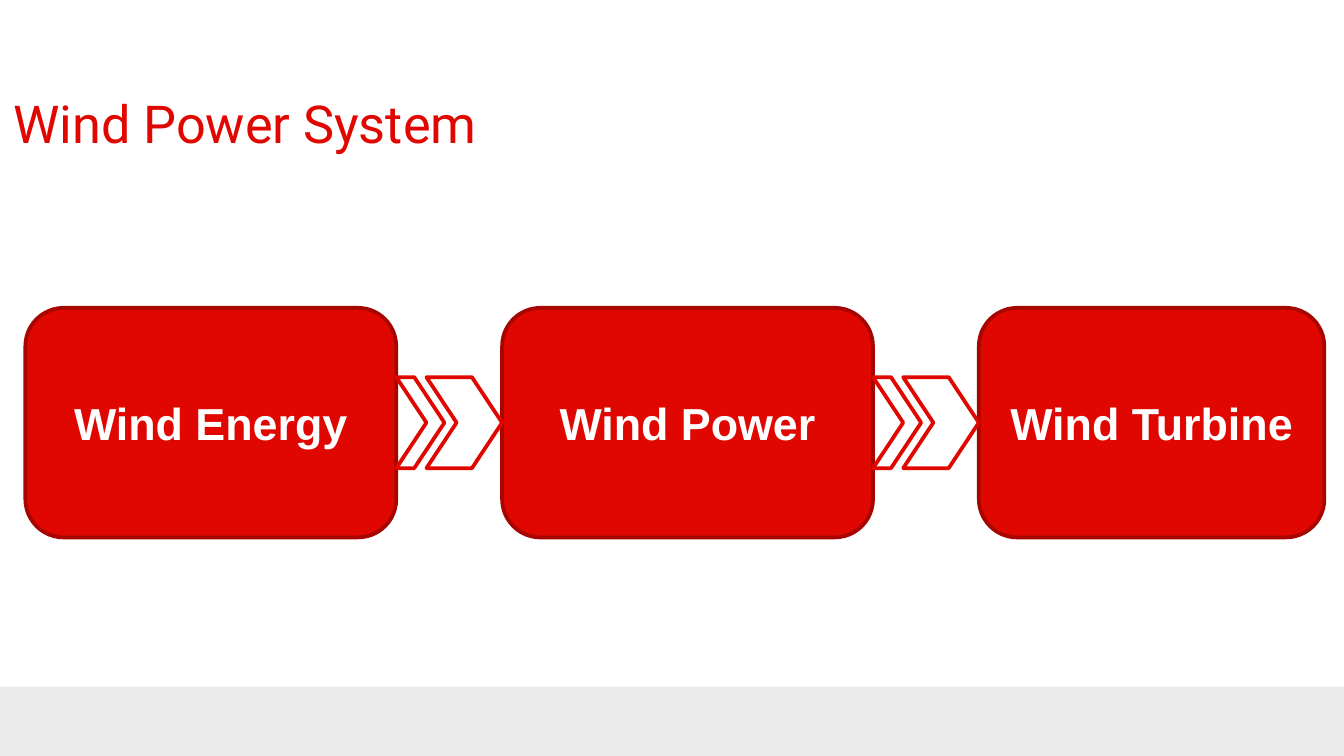
"""Build the Wind Power System slide: three boxes joined by double chevrons."""
from pptx import Presentation
from pptx import util as u
from pptx.dml import color
from pptx.enum import shapes, text

THEME = {
    "red": "E00700", "edge": "A60500", "white": "FFFFFF", "gray": "EBEBEB",
    "head": {"name": "Roboto", "size": u.Pt(28)},
    "label": {"name": "Arial", "size": u.Pt(24), "bold": True},
    "line": u.Pt(2),
}


class Deck:
    """Hold the theme and the current slide."""

    def __init__(self, prs, theme):
        """Start a blank slide."""
        self.theme = theme
        self.slide = prs.slides.add_slide(prs.slide_layouts[6])

    def tone(self, name):
        """Return a theme colour."""
        return color.RGBColor.from_string(self.theme[name])

    def paint(self, shape, fill, line=None):
        """Set the fill and outline of a shape."""
        shape.shadow.inherit = False
        shape.fill.solid()
        shape.fill.fore_color.rgb = self.tone(fill)
        if line:
            shape.line.color.rgb = self.tone(line)
            shape.line.width = self.theme["line"]
        else:
            shape.line.fill.background()

    def label(self, shape, words, style, tone, align):
        """Put one styled line of text in a shape."""
        frame = shape.text_frame
        frame.word_wrap = True
        frame.vertical_anchor = text.MSO_ANCHOR.MIDDLE
        para = frame.paragraphs[0]
        para.alignment = align
        run = para.add_run()
        run.text = words
        for key, value in self.theme[style].items():
            setattr(run.font, key, value)
        run.font.color.rgb = self.tone(tone)
        return frame

    def title(self, words, *area):
        """Add the slide title."""
        box = self.slide.shapes.add_textbox(*map(u.Cm, area))
        frame = self.label(box, words, "head", "red", text.PP_ALIGN.LEFT)
        for side in ("left", "top", "right", "bottom"):
            setattr(frame, f"margin_{side}", u.Cm(0.25))

    def band(self, *area):
        """Add the plain band at the foot."""
        kind = shapes.MSO_SHAPE.RECTANGLE
        self.paint(self.slide.shapes.add_shape(kind, *map(u.Cm, area)), "gray")

    def box(self, words, *area):
        """Add a rounded box with a centred label."""
        kind = shapes.MSO_SHAPE.ROUNDED_RECTANGLE
        shape = self.slide.shapes.add_shape(kind, *map(u.Cm, area))
        self.paint(shape, "red", "edge")
        self.label(shape, words, "label", "white", text.PP_ALIGN.CENTER)

    def arrow(self, left, mid, tip, half, parts):
        """Add a group of chevrons from (offset, body) pairs."""
        group = self.slide.shapes.add_group_shape()
        for shift, body in parts:
            x = left + shift
            dots = [(x, mid - half), (x + tip, mid), (x, mid + half),
                    (x + body, mid + half), (x + body + tip, mid),
                    (x + body, mid - half)]
            dots = [(u.Cm(a), u.Cm(b)) for a, b in dots]
            pen = group.shapes.build_freeform(*dots[0])
            pen.add_line_segments(dots[1:], close=True)
            self.paint(pen.convert_to_shape(), "white", "red")


def main():
    """Lay out the slide and save it."""
    prs = Presentation()
    wide, high = 25.4, 14.29
    prs.slide_width, prs.slide_height = u.Cm(wide), u.Cm(high)
    deck = Deck(prs, THEME)
    foot = 12.98
    deck.band(0, foot, wide, high - foot)

    left, top, width, tall, pitch = 0.48, 5.82, 7.01, 4.34, 9.01
    steps = [("Wind Energy", width), ("Wind Power", width),
             ("Wind Turbine", 6.53)]
    for i, (words, span) in enumerate(steps):
        deck.box(words, left + i * pitch, top, span, tall)
    deck.title("Wind Power System", 0, 1.88, 21.39, 0.89)

    tip = 0.57
    parts = [(tip, pitch - width - 2 * tip), (0, 0.34)]
    for i in range(len(steps) - 1):
        deck.arrow(left + width + i * pitch, top + tall / 2, tip, 0.86, parts)
    prs.save("out.pptx")


if __name__ == "__main__":
    main()
